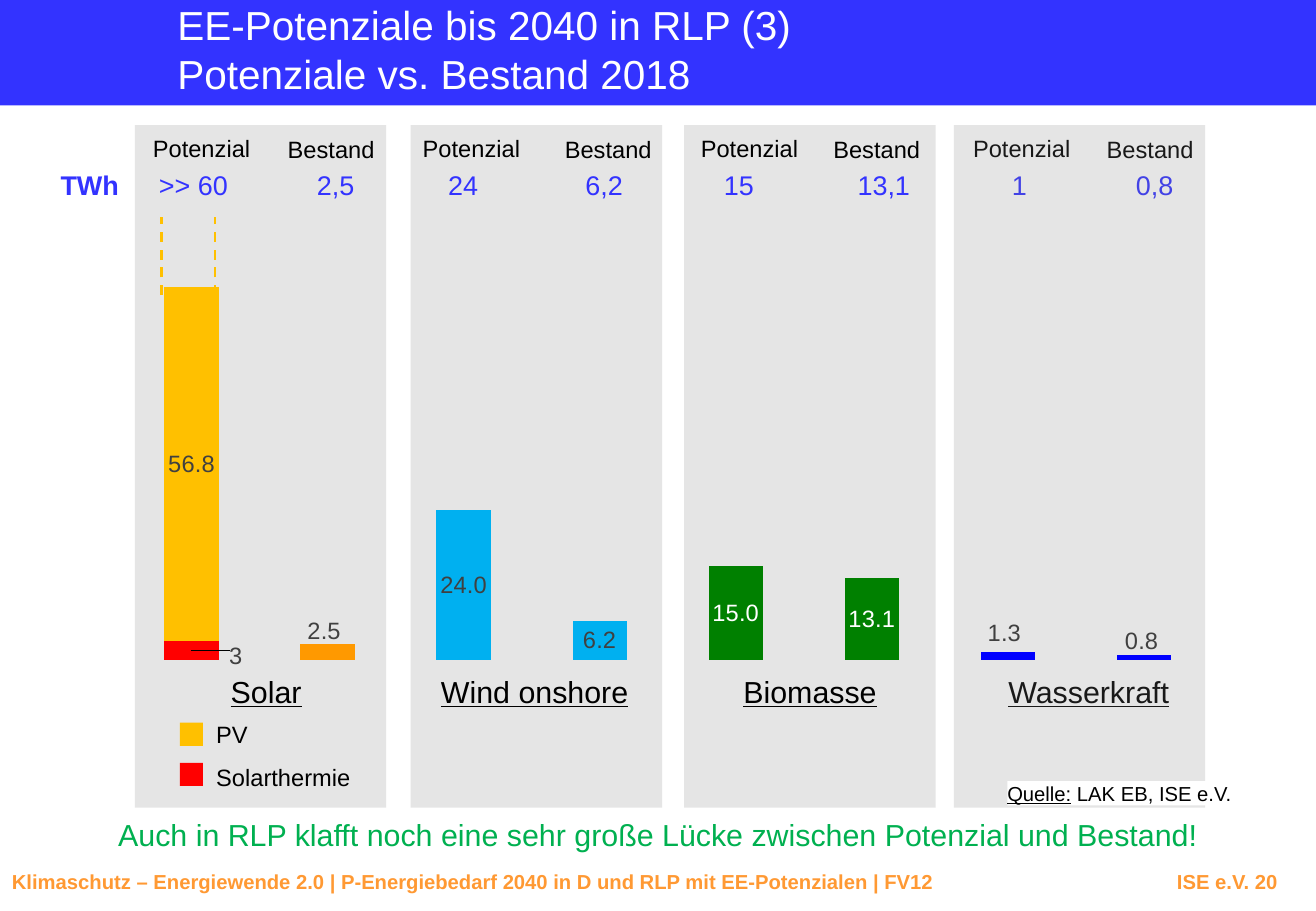
from lxml import etree
from pptx import Presentation
from pptx.chart.data import CategoryChartData
from pptx.dml.color import RGBColor
from pptx.enum import chart as ch, dml, shapes, text
from pptx.oxml import parse_xml
from pptx.oxml.ns import nsdecls, qn
from pptx.util import Pt

BLUE = RGBColor(0x33, 0x33, 0xFF)
GREY = RGBColor(0x7F, 0x7F, 0x7F)
DARK = RGBColor(0x40, 0x40, 0x40)
BLACK = RGBColor(0, 0, 0)
WHITE = RGBColor(0xFF, 0xFF, 0xFF)
GOLD = RGBColor(0xFF, 0xC0, 0x00)
ORANGE = RGBColor(0xFF, 0x99, 0x00)
FOOT = RGBColor(0xFF, 0x99, 0x33)
RED = RGBColor(0xFF, 0, 0)
SKY = RGBColor(0x00, 0xB0, 0xF0)
LEAF = RGBColor(0x00, 0x80, 0x00)
GREEN = RGBColor(0x00, 0xB0, 0x50)
WATER = RGBColor(0, 0, 0xFF)

PANELS = (79.9, 243.4, 405.4, 565.2)
# Each row: top, size, colour, underline, then (text, left, width) per panel
ROWS = (
    (75.6, 14, BLACK, False,
     [("Potenzial", x, 72.7) for x in (83.5, 243.4, 408.2, 569.5)]),
    (76.3, 14, BLACK, False,
     [("Bestand", x, 66.2) for x in (163.4, 327.6, 486.7, 648.7)]),
    (96.5, 16, BLUE, False,
     [(">> 60", 87.1, 56.2), ("24", 258.5, 32.4),
      ("15", 421.9, 32.4), ("1", 592.6, 23.8)]),
    (96.5, 16, BLUE, False,
     [("2,5", 180.7, 36.7), ("6,2", 339.8, 36.7),
      ("13,1", 501.1, 46.1), ("0,8", 666, 36.7)]),
    (395.3, 18, BLACK, True,
     [("Solar", 129.6, 56.9), ("Wind onshore", 254.2, 126.7),
      ("Biomasse", 433.4, 94.3), ("Wasserkraft", 590.4, 110.9)]),
)
HEAT = (3, 0) + (None,) * 6
POWER = (56.8, 2.5, 24, 6.2, 15, 13.1, 1.3, 0.8)
HUES = (GOLD, ORANGE, SKY, SKY, LEAF, LEAF, WATER, WATER)
# Point: label colour, shift as a share of the chart
HEAT_TAGS = {0: (DARK, (0.039, 0.012))}
POWER_TAGS = {1: (DARK, (-0.003, -0.045)), 4: (WHITE, None),
              5: (WHITE, None), 6: (DARK, (-0.003, -0.05)),
              7: (DARK, (-0.002, -0.036))}


def style(font, color, **form):
    for key, val in {"name": "Arial", **form}.items():
        setattr(font, key, val)
    font.color.rgb = color


def block(slide, x, y, w, h, color, alpha=None):
    box = slide.shapes.add_shape(
        shapes.MSO_SHAPE.RECTANGLE, Pt(x), Pt(y), Pt(w), Pt(h))
    box.shadow.inherit = False
    box.fill.solid()
    box.fill.fore_color.rgb = color
    box.line.fill.background()
    if alpha:
        tint = box.fill._xPr.find(".//" + qn("a:srgbClr"))
        etree.SubElement(tint, qn("a:alpha")).set("val", str(alpha * 1000))


def panel(slide, x):
    block(slide, x, 74.2, 149, 404.6, GREY, 20)


def label(slide, x, y, w, h, words, size, color, wrap=False, inset=None,
          **form):
    box = slide.shapes.add_textbox(Pt(x), Pt(y), Pt(w), Pt(h))
    frame = box.text_frame
    frame.word_wrap = wrap
    frame.auto_size = text.MSO_AUTO_SIZE.SHAPE_TO_FIT_TEXT
    if inset is not None:
        for side in ("left", "top", "right", "bottom"):
            setattr(frame, "margin_" + side, Pt(inset))
    frame.text = words
    for run in frame.paragraphs[0].runs:
        style(run.font, color, size=Pt(size), **form)
    return box


def dash(slide, x):
    line = slide.shapes.add_connector(
        shapes.MSO_CONNECTOR.STRAIGHT, Pt(x), Pt(175), Pt(x), Pt(128.9))
    line.line.color.rgb = GOLD
    line.line.width = Pt(1.5)
    line.line.dash_style = dml.MSO_LINE.DASH
    etree.SubElement(line._element.spPr, qn("a:effectLst"))


def layout(x, y, w=None, h=None):
    sizes = [("xMode", "edge"), ("yMode", "edge")] if w else []
    sizes += [("x", x), ("y", y)]
    if w:
        sizes = [("layoutTarget", "inner")] + sizes + [("w", w), ("h", h)]
    body = "".join(f'<c:{key} val="{val}"/>' for key, val in sizes)
    return parse_xml(f'<c:layout {nsdecls("c")}><c:manualLayout>{body}'
                     '</c:manualLayout></c:layout>')


def tag(ser, tags, code):
    for idx, (color, shift) in tags.items():
        style(ser.points[idx].data_label.font, color, size=Pt(14))
        node = ser._element.xpath(f'.//c:dLbl[c:idx/@val="{idx}"]')[0]
        node.insert(1, parse_xml(
            f'<c:numFmt {nsdecls("c")} formatCode="{code}" '
            'sourceLinked="0"/>'))
        if shift:
            node.insert(1, layout(*shift))


def paint(ser, hues):
    for idx, hue in enumerate(hues):
        fill = ser.points[idx].format.fill
        fill.solid()
        fill.fore_color.rgb = hue


def bars(slide):
    data = CategoryChartData()
    data.categories = [str(n) for n in range(1, 9)]
    data.add_series("Series 1", HEAT)
    data.add_series("Series 2", POWER)
    chart = slide.shapes.add_chart(
        ch.XL_CHART_TYPE.COLUMN_STACKED, Pt(59.8), Pt(127.4), Pt(671.8),
        Pt(269.3), data).chart
    chart.has_legend = chart.has_title = False
    style(chart.font, BLACK, size=Pt(10))
    area = chart._chartSpace.find(qn("c:chart"))
    area.addnext(parse_xml(
        f'<c:spPr {nsdecls("c", "a")}><a:noFill/><a:ln><a:noFill/></a:ln>'
        '</c:spPr>'))
    inner = area.find(qn("c:plotArea"))
    for old in inner.findall(qn("c:layout")):
        inner.remove(old)
    inner.insert(0, layout(0.02, 0.02, 0.96, 0.96))

    # Axes
    axis = chart.value_axis
    axis.minimum_scale, axis.maximum_scale = 0, 70
    axis.has_major_gridlines = False
    axis.visible = chart.category_axis.visible = False

    # Columns and their values
    plot = chart.plots[0]
    plot.gap_width, plot.overlap = 150, 100
    plot.vary_by_categories = False
    heat, power = plot.series
    paint(heat, [RED])
    paint(power, HUES)
    notes = power.data_labels
    notes.show_value = True
    notes.number_format, notes.number_format_is_linked = "0.0", False
    style(notes.font, DARK, size=Pt(14))
    heat.data_labels.show_value = False
    tag(heat, HEAT_TAGS, "0")
    tag(power, POWER_TAGS, "0.0")

    # Leader line for solar heat
    heat._element.find(qn("c:dLbls")).append(parse_xml(
        f'<c:extLst {nsdecls("c")}>'
        '<c:ext uri="{CE6537A1-D6FC-4f65-9D91-7224C49458BB}" xmlns:c15='
        '"http://schemas.microsoft.com/office/drawing/2012/chart">'
        '<c15:showLeaderLines val="1"/></c:ext></c:extLst>'))


def footer(slide):
    box = label(slide, 0, 511.9, 779.8, 36, "", 12, FOOT, True)
    par = box.text_frame.paragraphs[0]
    tabs = etree.SubElement(par._p.get_or_add_pPr(), qn("a:tabLst"))
    stop = etree.SubElement(tabs, qn("a:tab"))
    stop.set("pos", str(Pt(750)))
    stop.set("algn", "r")
    run = par.add_run()
    run.text = ("Klimaschutz – Energiewende 2.0 | P-Energiebedarf 2040 in D "
                "und RLP mit EE-Potenzialen | FV12\tISE e.V. 20")
    style(run.font, FOOT, size=Pt(12), bold=True)


def main():
    prs = Presentation()
    prs.slide_width, prs.slide_height = Pt(779.8), Pt(540)
    slide = prs.slides.add_slide(prs.slide_layouts[6])

    # Title band and footer
    block(slide, 0, 0, 779.8, 62.6, BLUE)
    label(slide, 105.1, 0, 587.5, 58.3,
          "EE-Potenziale bis 2040 in RLP (3)\vPotenziale vs. Bestand 2018",
          24, WHITE, True, 0)
    footer(slide)

    # Panels with heads, amounts and names; the last panel veils its text
    for x in PANELS[:3]:
        panel(slide, x)
    for top, size, color, under, cells in ROWS:
        for words, x, w in cells:
            label(slide, x, top, w, size * 1.2 + 7.2, words, size, color,
                  underline=under)
    label(slide, 28.8, 96.5, 49.7, 26.6, "TWh", 16, BLUE, bold=True)
    panel(slide, PANELS[3])

    # Legend
    for words, y, w, hue in (("PV", 423.4, 33.1, GOLD),
                             ("Solarthermie", 448.6, 94.3, RED)):
        label(slide, 121, y, w, 24.5, words, 14, BLACK)
    for y, hue in ((428.4, GOLD), (452.2, RED)):
        block(slide, 106.6, y, 13.7, 13.7, hue)

    # Open top of the solar column
    for x in (95.8, 127.4):
        dash(slide, x)

    # Source and message
    box = label(slide, 596.9, 463, 134.6, 14.4, "Quelle:", 12, BLACK,
                inset=0, underline=True)
    box.fill.solid()
    box.fill.fore_color.rgb = WHITE
    run = box.text_frame.paragraphs[0].add_run()
    run.text = " LAK EB, ISE e.V."
    style(run.font, BLACK, size=Pt(12))
    box = label(slide, 0, 478.8, 779.8, 31.7,
                "Auch in RLP klafft noch eine sehr große Lücke zwischen "
                "Potenzial und Bestand!", 18, GREEN, True, 5)
    box.text_frame.paragraphs[0].alignment = text.PP_ALIGN.CENTER

    bars(slide)
    prs.save("out.pptx")


if __name__ == "__main__":
    main()
